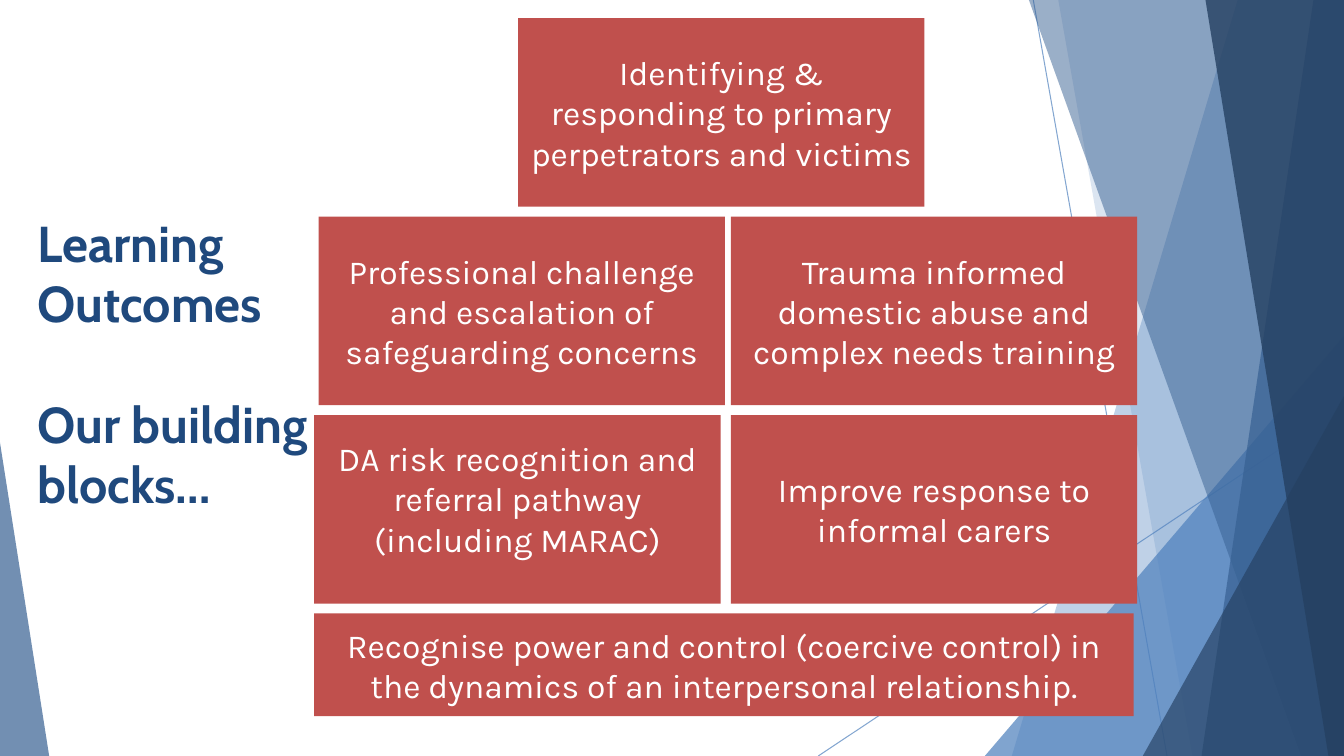
from pptx import Presentation
from pptx.dml.color import RGBColor
from pptx.enum.shapes import MSO_CONNECTOR, MSO_SHAPE
from pptx.enum.text import MSO_ANCHOR, MSO_AUTO_SIZE, PP_ALIGN
from pptx.oxml.ns import qn
from pptx.oxml.xmlchemy import OxmlElement
from pptx.util import Cm, Pt

RECT, PEAK = MSO_SHAPE.RECTANGLE, MSO_SHAPE.ISOSCELES_TRIANGLE
LINE = MSO_CONNECTOR.STRAIGHT
TOP, MID, LOW = MSO_ANCHOR.TOP, MSO_ANCHOR.MIDDLE, MSO_ANCHOR.BOTTOM
LEFT, MIDST = PP_ALIGN.LEFT, PP_ALIGN.CENTER
FIXED = MSO_AUTO_SIZE.NONE

TITLE = ["Learning Outcomes", "Our building blocks…"]
BLOCKS = [
    (0, 13.06, ["Identifying & responding to primary perpetrators and victims"], {}),
    (1, 18.42, ["Trauma informed domestic abuse and complex needs training"], {}),
    (1, 8.03, ["Professional challenge and escalation of safeguarding concerns"], {}),
    (2, 18.42, ["Improve response to informal carers"], {}),
    (2, 7.92, ["DA risk recognition and referral pathway", "(including MARAC)"],
     {"vertical_anchor": LOW, "margin_bottom": Cm(1.13)}),
    (3, 7.92, ["Recognise power and control (coercive control) in the dynamics "
               "of an interpersonal relationship."], {}),
]
RAYS = [(26.04, 0, 29.41, 19.05), (33.87, 10.24, 20.62, 19.05)]
SHARDS = [
    ("band", (31.19, 25.5), "sky", 36),
    ("band", (26.67, 30.05), "sky", 20),
    ("peak", (24.82, 8.46, 9.05, 1), "sky", 72),
    ("band", (25.93, 32.79), "steel", 50),
    ("band", (33.1, 30.28), "steel", 70),
    ("band", (30.38, 33.48), "navy", 80),
    ("peak", (28.8, 9.98, 5.07, 1), "navy", 66),
    ("peak", (0, 11.15, 1.24, 0), "steel", 70),
]
THEME = {
    "sky": RGBColor.from_string("4F81BD"),
    "steel": RGBColor.from_string("376092"),
    "navy": RGBColor.from_string("254061"),
    "brick": RGBColor.from_string("C0504D"),
    "head": {"name": "Cabin", "size": Pt(36), "bold": True},
    "body": {"name": "Karla", "size": Pt(24), "bold": False},
    "ink": RGBColor.from_string("1F497D"),
    "white": RGBColor.from_string("FFFFFF"),
}
WIDE, HIGH = 33.87, 19.05
FIRST, STEP = 0.46, 5.0
BLOCK, BASE = (10.24, 4.75), (20.65, 2.59)


def put(item, vals):
    for key, val in vals.items():
        setattr(item, key, val)


def fade(shape, rate):
    for tint in shape._element.spPr.iter(qn("a:srgbClr")):
        alpha = OxmlElement("a:alpha")
        alpha.set("val", str(rate * 1000))
        tint.append(alpha)


def paint(shape, tint):
    shape.shadow.inherit = False
    shape.fill.solid()
    shape.fill.fore_color.rgb = THEME[tint]
    shape.line.fill.background()


def write(shape, lines, face, ink, align, frame, gap=0):
    text = shape.text_frame
    put(text, {"word_wrap": True, "auto_size": FIXED, **frame})
    text.text = "\n".join(lines)
    for rank, para in enumerate(text.paragraphs):
        put(para, {"alignment": align, "space_before": Pt(gap if rank else 0)})
        for run in para.runs:
            put(run.font, THEME[face])
            run.font.color.rgb = THEME[ink]


def band(shapes, upper, lower):
    pen = shapes.build_freeform(Cm(upper), 0, scale=1.0)
    ends = [(WIDE, 0), (WIDE, HIGH), (lower, HIGH)]
    pen.add_line_segments([(Cm(x), Cm(y)) for x, y in ends], close=True)
    return pen.convert_to_shape()


def peak(shapes, left, top, width, tip):
    shape = shapes.add_shape(PEAK, Cm(left), Cm(top), Cm(width), Cm(HIGH - top))
    shape.adjustments[0] = tip
    return shape


def main():
    deck = Presentation()
    put(deck, {"slide_width": Cm(WIDE), "slide_height": Cm(HIGH)})
    slide = deck.slides.add_slide(deck.slide_layouts[5])
    shapes = slide.shapes

    for ray in RAYS:
        line = shapes.add_connector(LINE, *map(Cm, ray))
        line.line.width = Pt(0.75)
        line.line.color.rgb = THEME["sky"]
        fade(line, 70)
        line._element.spPr.append(OxmlElement("a:effectLst"))

    make = {"band": band, "peak": peak}
    for kind, place, tint, rate in SHARDS:
        shard = make[kind](shapes, *place)
        paint(shard, tint)
        fade(shard, rate)

    for row, left, lines, frame in BLOCKS:
        size = BASE if row == 3 else BLOCK
        spot = (left, FIRST + row * STEP, *size)
        block = shapes.add_shape(RECT, *map(Cm, spot))
        paint(block, "brick")
        write(block, lines, "body", "white", MIDST, {"vertical_anchor": MID, **frame})

    title = shapes.title
    put(title, {"left": Cm(0.69), "top": Cm(5.21), "width": Cm(7.92), "height": Cm(9.5)})
    write(title, TITLE, "head", "ink", LEFT, {"vertical_anchor": TOP}, 43)
    deck.save("out.pptx")


if __name__ == "__main__":
    main()
